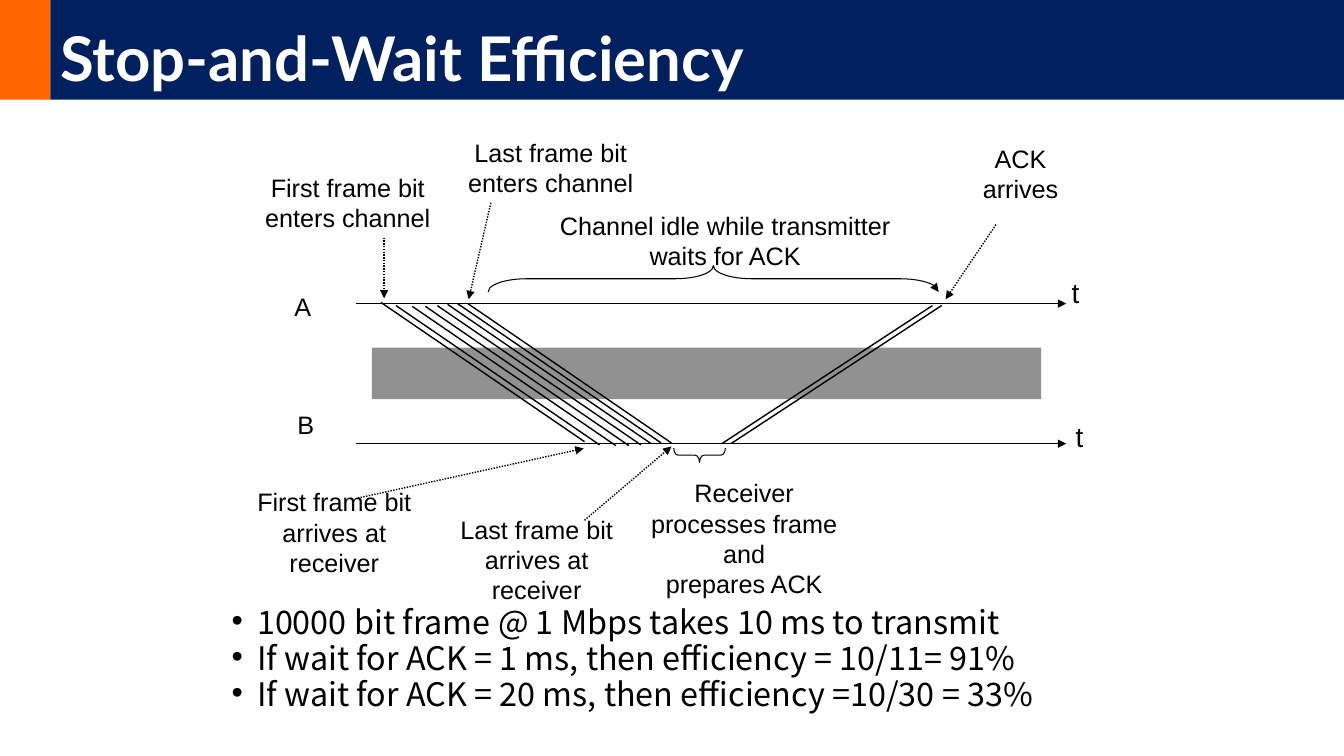
from lxml import etree
from pptx import Presentation
from pptx.dml.color import RGBColor
from pptx.enum.dml import MSO_LINE
from pptx.enum.shapes import MSO_CONNECTOR, MSO_SHAPE
from pptx.enum.text import MSO_ANCHOR, PP_ALIGN
from pptx.oxml.ns import qn
from pptx.util import Cm, Pt

COLORS = {"accent": "FF6600", "header": "002060", "title": "FFFFFF",
          "ink": "000000", "channel": "919191"}
SLIDE_SIZE = (33.87, 19.05)
HEADER_HEIGHT = 2.51
ACCENT_WIDTH = 1.27

# All positions are in centimetres.
TITLE = "Stop-and-Wait Efficiency"
POINTS = [
    "10000 bit frame @ 1 Mbps takes 10 ms to transmit",
    "If wait for ACK = 1 ms, then efficiency = 10/11= 91%",
    "If wait for ACK = 20 ms, then efficiency =10/30 = 33%",
]
POINTS_BOX = (5.59, 15.32, 23.11, 3.25)
CHANNEL_BOX = (9.37, 8.76, 16.87, 1.3)

TIME_START, TIME_END = 8.97, 26.87
TIME_AXES = {"A": 7.65, "B": 11.18}
FRAME_BIT_STARTS = [(9.6, 7.62), (9.98, 7.7), (10.39, 7.72), (10.72, 7.72),
                    (11.02, 7.7), (11.28, 7.67), (11.53, 7.65), (11.79, 7.65)]
FRAME_TRAVEL = (5.13, 3.51)
ACK_BIT_STARTS = [(18.19, 11.18), (18.42, 11.18)]
ACK_TRAVEL = (5.31, -3.48)

EVENTS = [  # text, box, pointer start, pointer end
    ("First frame bit enters channel", (6.15, 4.22, 5.23, 1.78), (9.68, 5.99), (9.68, 7.52)),
    ("Last frame bit enters channel", (10.92, 3.33, 5.92, 1.78), (12.37, 5.11), (11.81, 7.54)),
    ("ACK arrives", (23.88, 3.48, 3.68, 1.78), (25.1, 5.66), (23.83, 7.54)),
    ("First frame bit arrives at receiver", (6.05, 12.14, 4.75, 2.54), (9.02, 12.55), (14.71, 11.3)),
    ("Last frame bit arrives at receiver", (11.15, 12.83, 4.75, 2.54), (14.73, 13.11), (16.92, 11.25)),
]
PERIODS = [  # text, text box, brace box before rotation, rotation, curvature
    ("Channel idle while transmitter waits for ACK", (13.46, 5.18, 9.63, 1.78),
     (17.65, 1.35, 0.66, 11.35), 90, 1.46),
    ("Receiver processes frame and\nprepares ACK", (15.95, 11.91, 5.61, 3.3),
     (17.45, 10.82, 0.36, 1.3), 270, 0.31),
]
AXIS_LABELS = [  # text, box, size
    ("A", (7.16, 7.21, 0.94, 1.02), 18),
    ("B", (7.24, 10.19, 0.94, 1.02), 18),
    ("t", (26.75, 6.83, 0.71, 1.09), 20),
    ("t", (26.85, 10.44, 0.71, 1.09), 20),
]


def rgb(name):
    return RGBColor.from_string(COLORS[name])


def add_bar(slide, box, color):
    bar = slide.shapes.add_shape(MSO_SHAPE.RECTANGLE, *map(Cm, box))
    bar.shadow.inherit = False
    bar.fill.solid()
    bar.fill.fore_color.rgb = rgb(color)
    bar.line.fill.background()
    return bar


def write(shape, text, font, size, color="ink", align=PP_ALIGN.CENTER, bold=False, wrap=True):
    frame = shape.text_frame
    frame.text = text
    frame.word_wrap = wrap
    for paragraph in frame.paragraphs:
        paragraph.alignment = align
        for run in paragraph.runs:
            run.font.name = font
            run.font.size = Pt(size)
            run.font.bold = bold
            run.font.color.rgb = rgb(color)
    return frame


def add_text(slide, box, text, size=18, wrap=True):
    write(slide.shapes.add_textbox(*map(Cm, box)), text, "Arial", size, wrap=wrap)


def add_arrowhead(shape, end):
    """Put a triangle at 'headEnd' (start) or 'tailEnd' (finish) of the outline."""
    outline = shape.line._get_or_add_ln()
    etree.SubElement(outline, qn(f"a:{end}"), type="triangle")


def add_line(slide, start, finish, arrow=False, dotted=False):
    line = slide.shapes.add_connector(MSO_CONNECTOR.STRAIGHT, *map(Cm, (*start, *finish)))
    line.line.color.rgb = rgb("ink")
    line.line.width = Pt(1)
    if dotted:
        line.line.dash_style = MSO_LINE.ROUND_DOT
    if arrow:
        add_arrowhead(line, "tailEnd")
    etree.SubElement(line._element.spPr, qn("a:effectLst"))


def add_brace(slide, box, rotation, curvature):
    brace = slide.shapes.add_shape(MSO_SHAPE.LEFT_BRACE, *map(Cm, box))
    brace.shadow.inherit = False
    brace.fill.background()
    brace.line.color.rgb = rgb("ink")
    brace.line.width = Pt(0.75)
    brace.rotation = rotation
    brace.adjustments[0] = curvature
    return brace


def add_header(slide):
    add_bar(slide, (0, 0, ACCENT_WIDTH, HEADER_HEIGHT), "accent")
    header = add_bar(slide, (ACCENT_WIDTH, 0, SLIDE_SIZE[0] - ACCENT_WIDTH, HEADER_HEIGHT), "header")
    frame = write(header, TITLE, "Lato", 44, "title", PP_ALIGN.LEFT, bold=True)
    frame.vertical_anchor = MSO_ANCHOR.BOTTOM
    frame.paragraphs[0].line_spacing = 0.9


def add_points(slide):
    points = slide.shapes.add_textbox(*map(Cm, POINTS_BOX))
    frame = write(points, "\n".join(POINTS), "Noto Sans CJK KR", 23.1, align=PP_ALIGN.LEFT)
    for paragraph in frame.paragraphs:
        paragraph.line_spacing = 0.7
        paragraph.space_before = Pt(6.2)
        properties = paragraph._p.get_or_add_pPr()
        properties.set("marL", str(Cm(0.64)))
        properties.set("indent", str(-Cm(0.64)))
        etree.SubElement(properties, qn("a:buFont"), typeface="Arial")
        etree.SubElement(properties, qn("a:buChar"), char="•")


def add_timing_diagram(slide):
    add_bar(slide, CHANNEL_BOX, "channel")
    for y in TIME_AXES.values():
        add_line(slide, (TIME_START, y), (TIME_END, y), arrow=True)
    for starts, (dx, dy) in ((FRAME_BIT_STARTS, FRAME_TRAVEL), (ACK_BIT_STARTS, ACK_TRAVEL)):
        for x, y in starts:
            add_line(slide, (x, y), (x + dx, y + dy))
    for text, box, start, finish in EVENTS:
        add_line(slide, start, finish, arrow=True, dotted=True)
        add_text(slide, box, text)
    idle, processing = [add_brace(slide, *brace) for _, _, *brace in PERIODS]
    idle._element.spPr.xfrm.set("flipV", "1")
    add_arrowhead(idle, "headEnd")
    for text, box, *_ in PERIODS:
        add_text(slide, box, text)
    for text, box, size in AXIS_LABELS:
        add_text(slide, box, text, size, wrap=False)


def main():
    deck = Presentation()
    deck.slide_width, deck.slide_height = map(Cm, SLIDE_SIZE)
    slide = deck.slides.add_slide(deck.slide_layouts[6])
    add_header(slide)
    add_points(slide)
    add_timing_diagram(slide)
    deck.save("out.pptx")


if __name__ == "__main__":
    main()
